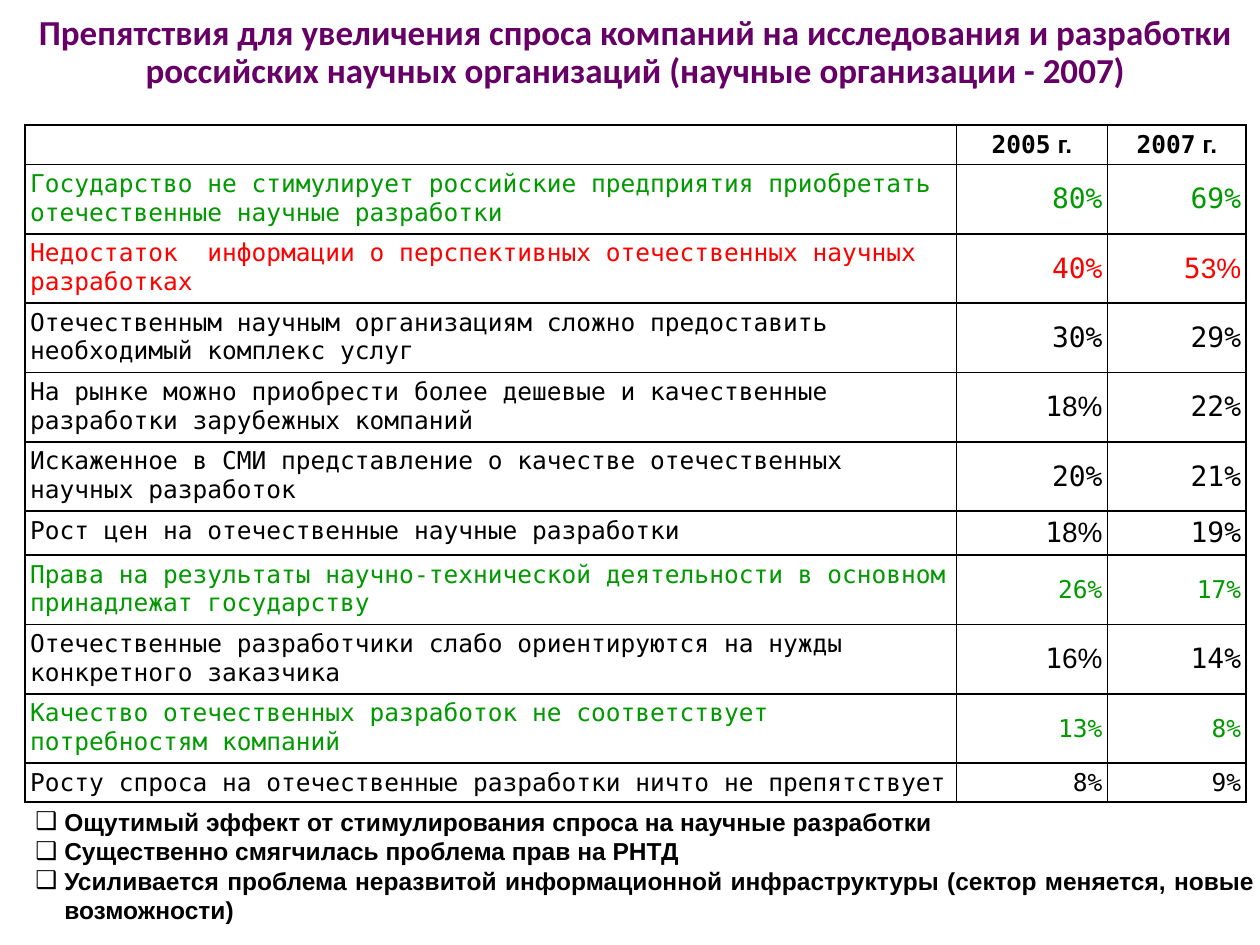
"""Build a slide on obstacles to demand for Russian research."""
from dataclasses import dataclass
from typing import Any

from pptx import Presentation
from pptx.dml.color import RGBColor
from pptx.enum import text as t
from pptx.oxml import xmlchemy as xml
from pptx.util import Inches, Pt


@dataclass(frozen=True)
class Theme:
    plum: str = "660066"
    green: str = "009900"
    red: str = "FF0000"
    black: str = "000000"
    white: str = "FFFFFF"
    head: int = 20
    big: int = 16
    base: int = 14
    title: str = "Calibri"
    sans: str = "Arial"
    mono: str = "DejaVu Sans Mono"
    pad: float = 0.04


@dataclass(frozen=True)
class Row:
    label: str
    old: str
    new: str
    color: str = Theme.black
    size: int = Theme.big
    high: float = 0.55


T = Theme()
TITLE = ("Препятствия для увеличения спроса компаний на исследования и разработки "
         "российских научных организаций (научные организации - 2007)")
ROWS = [
    Row("Государство не стимулирует российские предприятия приобретать "
        "отечественные научные разработки", "80%", "69%", T.green),
    Row("Недостаток  информации о перспективных отечественных научных разработках",
        "40%", "5|3%", T.red),
    Row("Отечественным научным организациям сложно предоставить "
        "необходимый комплекс услуг", "30%", "29%"),
    Row("На рынке можно приобрести более дешевые и качественные "
        "разработки зарубежных компаний", "1|8%", "22%"),
    Row("Искаженное в СМИ представление о качестве отечественных "
        "научных разработок", "20%", "21%"),
    Row("Рост цен на отечественные научные разработки", "1|8%", "19%", high=0.35),
    Row("Права на результаты научно-технической деятельности в основном "
        "принадлежат государству", "26%", "17%", T.green, T.base),
    Row("Отечественные разработчики слабо ориентируются на нужды "
        "конкретного заказчика", "1|6%", "14%"),
    Row("Качество отечественных разработок не соответствует "
        "потребностям компаний", "13%", "8%", T.green, T.base),
    Row("Росту спроса на отечественные разработки ничто не препятствует",
        "8%", "9%", size=T.base, high=0.31),
]
NOTES = [
    "Ощутимый эффект от стимулирования спроса на научные разработки",
    "Существенно смягчилась проблема прав на РНТД",
    "Усиливается проблема неразвитой информационной инфраструктуры "
    "(сектор меняется, новые возможности)",
]


def style(run: Any, face: str, size: int, color: str, bold: bool = False) -> None:
    """Format one run."""
    font = run.font
    font.name, font.size, font.bold = face, Pt(size), bold
    font.color.rgb = RGBColor.from_string(color)


def node(parent: Any, tag: str, **attrs: str) -> Any:
    """Append an XML child with attributes."""
    child = xml.OxmlElement(tag)
    for key, val in attrs.items():
        child.set(key, val)
    parent.append(child)
    return child


def place(item: Any, left: float, top: float, width: float, height: float) -> None:
    """Move and size a shape."""
    item.left, item.top = Inches(left), Inches(top)
    item.width, item.height = Inches(width), Inches(height)


def inset(item: Any) -> None:
    """Give a cell or frame its narrow margins."""
    item.margin_left = item.margin_right = Inches(T.pad)
    item.margin_top = item.margin_bottom = Inches(T.pad)


def write(cell: Any, words: str, size: int, color: str, align: Any,
          bold: bool = False) -> None:
    """Fill a cell, with text after a bar set in the sans face."""
    inset(cell)
    left = align == t.PP_ALIGN.LEFT
    cell.vertical_anchor = t.MSO_ANCHOR.TOP if left else t.MSO_ANCHOR.MIDDLE
    para = cell.text_frame.paragraphs[0]
    para.alignment = align
    if words:
        for part, face in zip(words.split("|"), (T.mono, T.sans)):
            run = para.add_run()
            run.text = part
            style(run, face, size, color, bold)
    else:
        node(para._p, "a:endParaRPr", sz=str(size * 100))
    props = cell._tc.get_or_add_tcPr()
    for side in "LRTB":
        line = node(props, f"a:ln{side}", w=str(Pt(1)))
        node(node(line, "a:solidFill"), "a:srgbClr", val=T.black)
    cell.fill.solid()
    cell.fill.fore_color.rgb = RGBColor.from_string(T.white)


def grid(slide: Any) -> None:
    """Draw the table of obstacles."""
    highs = [0.31] + [row.high for row in ROWS]
    frame = slide.shapes.add_table(len(highs), 3, Inches(0.2), Inches(0.99),
                                   Inches(9.69), Inches(sum(highs)))
    table = frame.table
    table.first_row = table.horz_banding = False
    for col, width in zip(table.columns, (7.39, 1.2, 1.1)):
        col.width = Inches(width)
    for line, high in zip(table.rows, highs):
        line.height = Inches(high)
    for col, words in enumerate(("", "2005| г.", "2007| г.")):
        write(table.cell(0, col), words, T.base, T.black, t.PP_ALIGN.CENTER, True)
    for num, row in enumerate(ROWS, 1):
        write(table.cell(num, 0), row.label, T.base, row.color, t.PP_ALIGN.LEFT)
        for col, words in enumerate((row.old, row.new), 1):
            write(table.cell(num, col), words, row.size, row.color, t.PP_ALIGN.RIGHT)


def head(title: Any) -> None:
    """Set the slide title."""
    place(title, 0.2, 0.13, 9.69, 0.59)
    frame = title.text_frame
    frame.text = TITLE
    inset(frame)
    frame.auto_size = t.MSO_AUTO_SIZE.NONE
    frame.vertical_anchor = t.MSO_ANCHOR.MIDDLE
    para = frame.paragraphs[0]
    para.alignment, para.line_spacing = t.PP_ALIGN.CENTER, 0.9
    style(para.runs[0], T.title, T.head, T.plum, True)


def notes(body: Any) -> None:
    """Set the bulleted findings."""
    place(body, 0.24, 6.36, 9.76, 1.02)
    frame = body.text_frame
    frame.text = "\n".join(NOTES)
    inset(frame)
    frame.auto_size = t.MSO_AUTO_SIZE.NONE
    frame.vertical_anchor = t.MSO_ANCHOR.MIDDLE
    for para in frame.paragraphs:
        para.alignment, para.space_before = t.PP_ALIGN.JUSTIFY, Pt(0)
        style(para.runs[0], T.sans, T.base, T.black, True)
        props = para._p.get_or_add_pPr()
        props.set("marL", str(Inches(0.23)))
        props.set("indent", str(-Inches(0.23)))
        node(props, "a:buChar", char="❑")


def main() -> None:
    """Build and save the slide."""
    deck = Presentation()
    deck.slide_width, deck.slide_height = Inches(10), Inches(7.5)
    slide = deck.slides.add_slide(deck.slide_layouts[1])
    head(slide.shapes.title)
    notes(slide.placeholders[1])
    grid(slide)
    deck.save("out.pptx")


if __name__ == "__main__":
    main()
